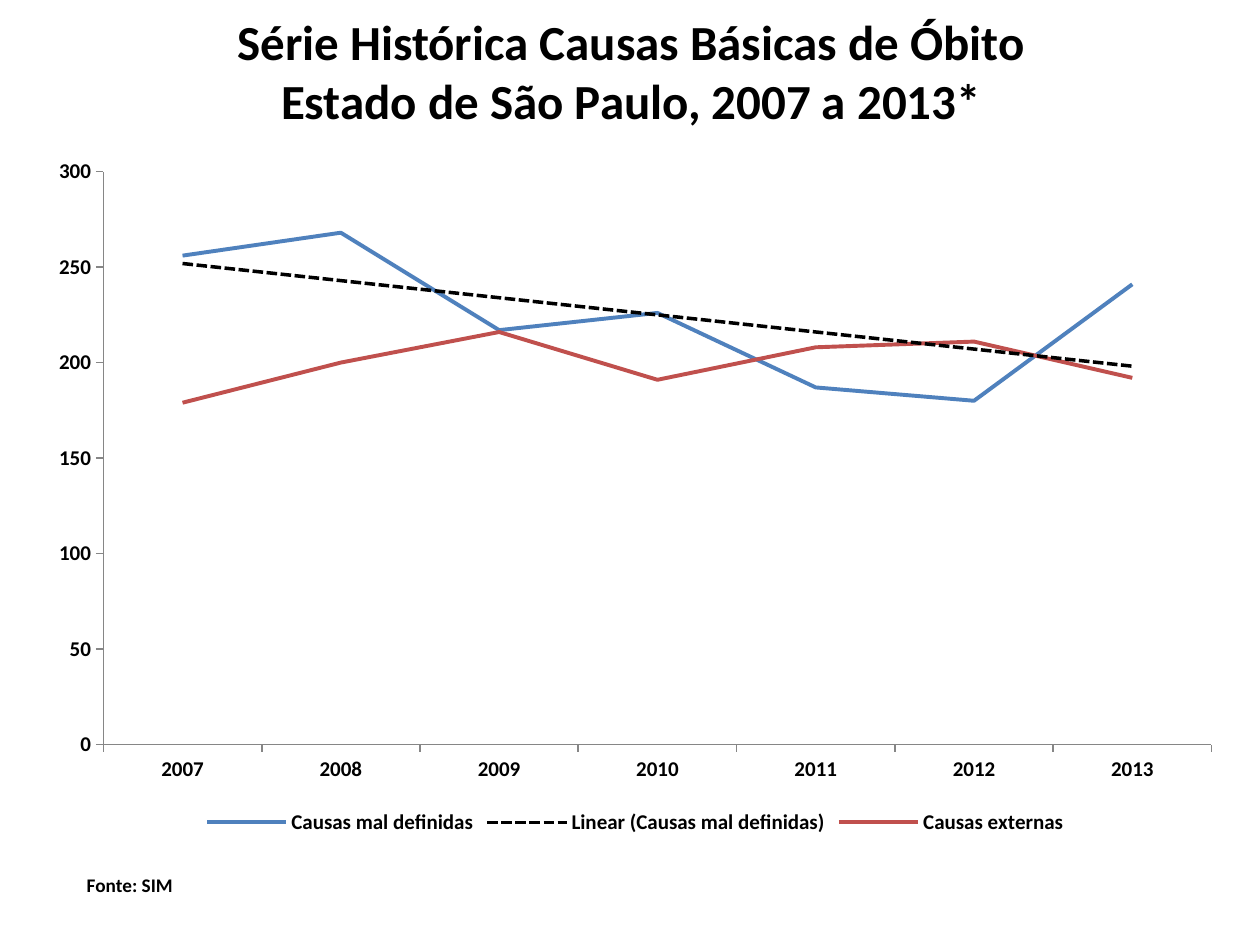
import pptx
import pptx.chart.data
import pptx.dml.color
import pptx.enum.chart
import pptx.enum.text
import pptx.oxml
import pptx.oxml.ns
import pptx.util

Pt = pptx.util.Pt
FONT = "Calibri"
BLACK = pptx.dml.color.RGBColor(0x00, 0x00, 0x00)
GRAY = pptx.dml.color.RGBColor(0x86, 0x86, 0x86)
BLUE = pptx.dml.color.RGBColor(0x4F, 0x81, 0xBD)
RED = pptx.dml.color.RGBColor(0xC0, 0x50, 0x4D)

YEARS = ["2007", "2008", "2009", "2010", "2011", "2012", "2013"]
CAUSES = [
    ("Causas mal definidas", [256, 268, 217, 226, 187, 180, 241], BLUE),
    ("Causas externas", [179, 200, 216, 191, 208, 211, 192], RED),
]


def style_font(font, size):
    """Apply the slide's bold black type at the given size."""
    font.name = FONT
    font.size = Pt(size)
    font.bold = True
    font.color.rgb = BLACK


def add_title(slide, left, top, width, height):
    """Place the two-line heading in the title placeholder."""
    title = slide.shapes.title
    title.left, title.top, title.width, title.height = map(Pt, (left, top, width, height))
    frame = title.text_frame
    frame.word_wrap = True
    frame.auto_size = pptx.enum.text.MSO_AUTO_SIZE.NONE
    frame.vertical_anchor = pptx.enum.text.MSO_ANCHOR.MIDDLE
    heading = frame.paragraphs[0]
    heading.add_run().text = "Série Histórica Causas Básicas de Óbito"
    heading.add_line_break()
    heading.add_run().text = "Estado de São Paulo, 2007 a 2013*"
    heading.alignment = pptx.enum.text.PP_ALIGN.CENTER
    style_font(heading.font, 28)


def add_linear_trend(cause):
    """Give a series a dashed black linear trend line."""
    trend = pptx.oxml.parse_xml(
        f'<c:trendline {pptx.oxml.ns.nsdecls("c", "a")}>'
        f'<c:spPr><a:ln w="{Pt(2)}"><a:solidFill><a:srgbClr val="{BLACK}"/></a:solidFill>'
        '<a:prstDash val="sysDash"/></a:ln></c:spPr>'
        '<c:trendlineType val="linear"/><c:dispRSqr val="0"/><c:dispEq val="0"/>'
        "</c:trendline>"
    )
    cause._element.find(pptx.oxml.ns.qn("c:cat")).addprevious(trend)


def style_axis(axis):
    """Format an axis with outward ticks, a gray line and no grid."""
    axis.has_major_gridlines = False
    axis.major_tick_mark = pptx.enum.chart.XL_TICK_MARK.OUTSIDE
    axis.minor_tick_mark = pptx.enum.chart.XL_TICK_MARK.NONE
    axis.format.line.color.rgb = GRAY
    axis.format.line.width = Pt(1)
    style_font(axis.tick_labels.font, 12)


def add_deaths_chart(slide, left, top, width, height):
    """Draw the yearly deaths by cause as a line chart."""
    deaths = pptx.chart.data.CategoryChartData(number_format="General")
    deaths.categories = YEARS
    for name, counts, _ in CAUSES:
        deaths.add_series(name, counts)
    chart = slide.shapes.add_chart(
        pptx.enum.chart.XL_CHART_TYPE.LINE,
        Pt(left), Pt(top), Pt(width), Pt(height), deaths,
    ).chart
    chart.has_title = False
    chart.font.name = FONT
    chart.font.size = Pt(10)
    chart.font.color.rgb = BLACK
    chart.has_legend = True
    chart.legend.position = pptx.enum.chart.XL_LEGEND_POSITION.BOTTOM
    chart.legend.include_in_layout = False
    style_font(chart.legend.font, 12)
    style_axis(chart.category_axis)
    style_axis(chart.value_axis)
    chart.value_axis.minimum_scale = 0
    chart.value_axis.maximum_scale = 300
    chart.value_axis.major_unit = 50
    plot = chart.plots[0]
    plot.vary_by_categories = False
    for cause, (_, _, color) in zip(plot.series, CAUSES):
        cause.smooth = False
        cause.marker.style = pptx.enum.chart.XL_MARKER_STYLE.NONE
        cause.format.line.color.rgb = color
        cause.format.line.width = Pt(2.25)
    add_linear_trend(plot.series[0])


def add_source_note(slide, left, top, width, height):
    """Write the data source below the chart."""
    note = slide.shapes.add_textbox(Pt(left), Pt(top), Pt(width), Pt(height))
    frame = note.text_frame
    frame.word_wrap = False
    frame.auto_size = pptx.enum.text.MSO_AUTO_SIZE.SHAPE_TO_FIT_TEXT
    frame.text = "Fonte: SIM"
    style_font(frame.paragraphs[0].font, 11)


def main():
    """Build and save the slide."""
    deck = pptx.Presentation()
    deck.slide_width, deck.slide_height = Pt(720), Pt(540)
    slide = deck.slides.add_slide(deck.slide_layouts[5])
    add_title(slide, 36.5, 15, 648, 50)
    add_deaths_chart(slide, 20, 83, 686, 397)
    add_source_note(slide, 42.5, 495.5, 64, 21)
    deck.save("out.pptx")


if __name__ == "__main__":
    main()
